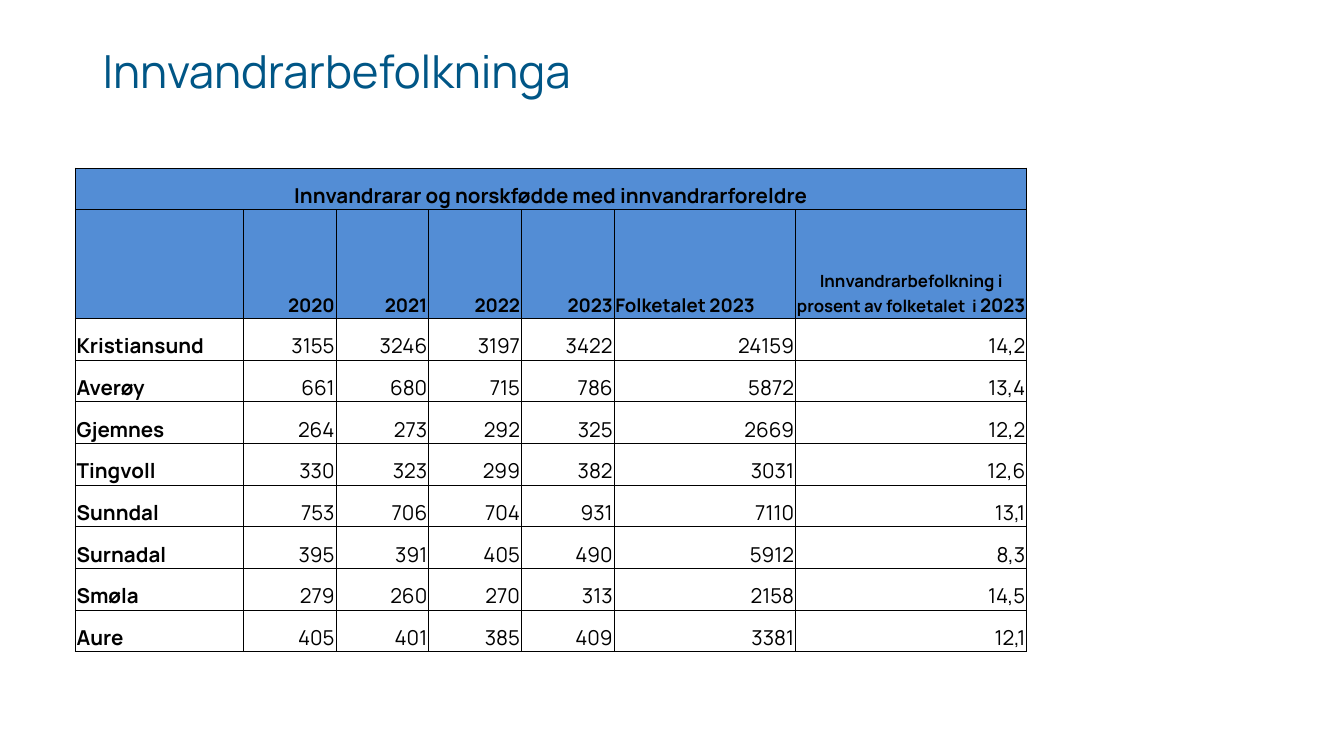
import dataclasses

import lxml.etree
import pptx
import pptx.dml.color
import pptx.enum.text
import pptx.oxml.ns
import pptx.util

Inches = pptx.util.Inches
Align = pptx.enum.text.PP_ALIGN


@dataclasses.dataclass(frozen=True)
class Theme:
    font: str = "Manrope"
    title_color: str = "005686"
    text_color: str = "000000"
    header_fill: str = "538DD5"
    border_color: str = "000000"
    title_size: float = 24.4
    body_size: float = 11
    header_size: float = 10
    note_size: float = 9
    border_width: float = 0.5


theme = Theme()


def style_span(span, size, color, bold=False):
    span.font.name = theme.font
    span.font.size = pptx.util.Pt(size)
    span.font.bold = bold
    span.font.color.rgb = pptx.dml.color.RGBColor.from_string(color)


def draw_borders(cell):
    """Line all four sides; the lines must precede the fill in the cell properties."""
    properties = cell._tc.get_or_add_tcPr()
    tag = pptx.oxml.ns.qn
    for index, side in enumerate(("a:lnL", "a:lnR", "a:lnT", "a:lnB")):
        line = lxml.etree.Element(tag(side), w=str(pptx.util.Pt(theme.border_width)))
        fill = lxml.etree.SubElement(line, tag("a:solidFill"))
        lxml.etree.SubElement(fill, tag("a:srgbClr"), val=theme.border_color)
        properties.insert(index, line)


# A 16:9 page
deck = pptx.Presentation()
deck.slide_width = Inches(10)
deck.slide_height = Inches(10 * 9 / 16)
page = deck.slides.add_slide(deck.slide_layouts[6])

# Title
box = page.shapes.add_textbox(Inches(-2.07), Inches(0.29), Inches(9.15), Inches(0.72))
frame = box.text_frame
frame.word_wrap = True
frame.margin_left = frame.margin_right = Inches(0.04)
frame.margin_top = frame.margin_bottom = Inches(0.02)
frame.text = "Innvandrarbefolkninga"
para = frame.paragraphs[0]
para.alignment = Align.CENTER
para.line_spacing = 1.03
style_span(para.runs[0], theme.title_size, theme.title_color)

# Table
heading = "Innvandrarar og norskfødde med innvandrarforeldre"
share_label = "Innvandrarbefolkning i prosent av folketalet  i "
share_year = "2023"
rows = [
    [heading, "", "", "", "", "", ""],
    ["", "2020", "2021", "2022", "2023", "Folketalet 2023", share_label],
    ["Kristiansund", "3155", "3246", "3197", "3422", "24159", "14,2"],
    ["Averøy", "661", "680", "715", "786", "5872", "13,4"],
    ["Gjemnes", "264", "273", "292", "325", "2669", "12,2"],
    ["Tingvoll", "330", "323", "299", "382", "3031", "12,6"],
    ["Sunndal", "753", "706", "704", "931", "7110", "13,1"],
    ["Surnadal", "395", "391", "405", "490", "5912", "8,3"],
    ["Smøla", "279", "260", "270", "313", "2158", "14,5"],
    ["Aure", "405", "401", "385", "409", "3381", "12,1"],
]
column_widths = [1.25] + [0.69] * 4 + [1.35, 1.72]
row_heights = [0.31, 0.81] + [0.31] * 8
table = page.shapes.add_table(
    len(rows), len(column_widths), Inches(0.56), Inches(1.25),
    Inches(sum(column_widths)), Inches(sum(row_heights)),
).table
table.first_row = False
table.horz_banding = False
for column, width in zip(table.columns, column_widths):
    column.width = Inches(width)
for row, height in zip(table.rows, row_heights):
    row.height = Inches(height)
table.cell(0, 0).merge(table.cell(0, len(column_widths) - 1))

for row_index, row in enumerate(rows):
    is_header = row_index < 2
    for column_index, text in enumerate(row):
        cell = table.cell(row_index, column_index)
        cell.vertical_anchor = pptx.enum.text.MSO_ANCHOR.BOTTOM
        cell.margin_left = cell.margin_right = cell.margin_top = Inches(0.01)
        cell.margin_bottom = 0
        if is_header:
            cell.fill.solid()
            cell.fill.fore_color.rgb = pptx.dml.color.RGBColor.from_string(theme.header_fill)
        else:
            cell.fill.background()
        draw_borders(cell)
        if not text:
            continue

        cell.text_frame.text = text
        para = cell.text_frame.paragraphs[0]
        if text in (heading, share_label):
            para.alignment = Align.CENTER
        elif column_index == 0 or (is_header and column_index == 5):
            para.alignment = Align.LEFT
        else:
            para.alignment = Align.RIGHT
        size = theme.header_size if row_index == 1 else theme.body_size
        if text == share_label:
            para.add_run().text = share_year
        for span in para.runs:
            span_size = theme.note_size if span.text == share_label else size
            style_span(span, span_size, theme.text_color, is_header or column_index == 0)

deck.save("out.pptx")
